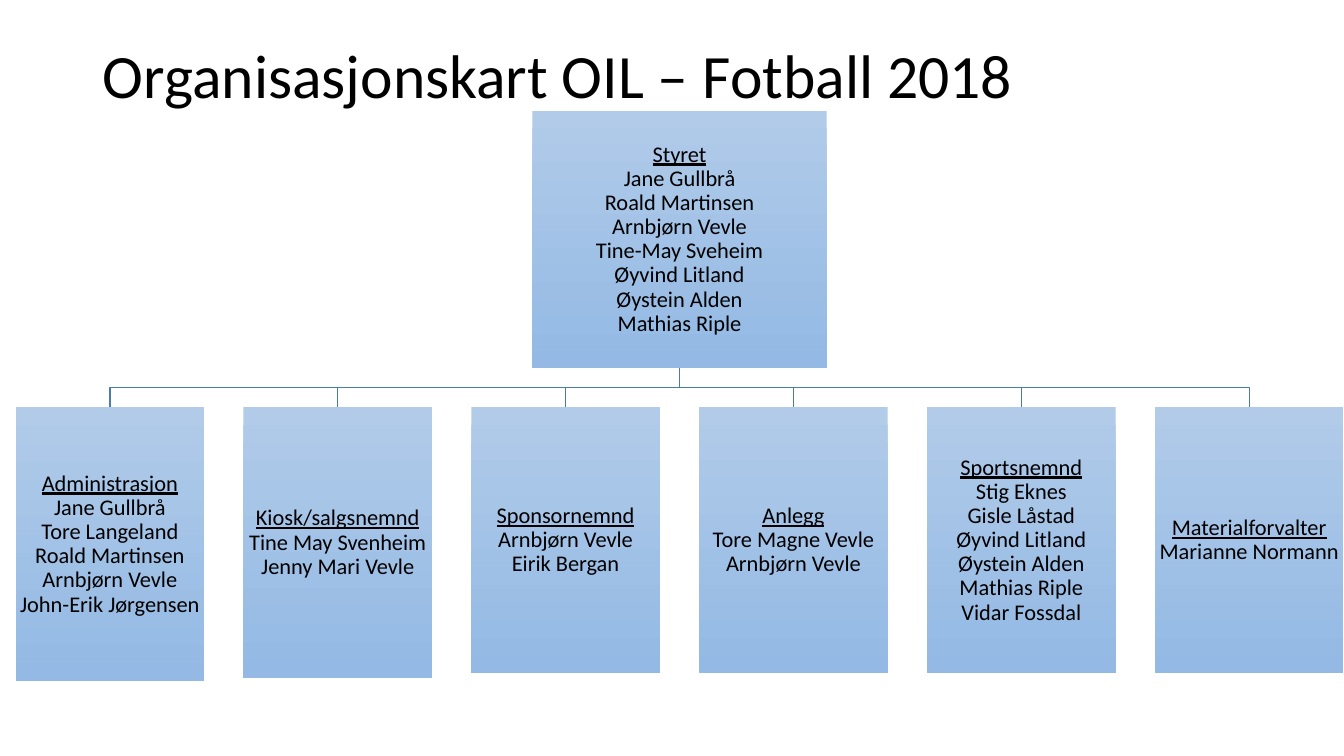
"""Build the organisation chart slide for OIL football, 2018."""
import pptx
import pptx.dml.color
import pptx.enum.text
import pptx.util

Inches = pptx.util.Inches
Pt = pptx.util.Pt
ALIGN = pptx.enum.text.PP_ALIGN
ANCHOR = pptx.enum.text.MSO_ANCHOR

BOARD = ["Styret", "Jane Gullbrå", "Roald Martinsen", "Arnbjørn Vevle",
         "Tine-May Sveheim", "Øyvind Litland", "Øystein Alden", "Mathias Riple"]
GROUPS = [
    (2.72, ["Administrasjon", "Jane Gullbrå", "Tore Langeland",
            "Roald Martinsen", "Arnbjørn Vevle", "John-Erik Jørgensen"]),
    (2.69, ["Kiosk/salgsnemnd", "Tine May Svenheim", "Jenny Mari Vevle"]),
    (2.64, ["Sponsornemnd", "Arnbjørn Vevle", "Eirik Bergan"]),
    (2.64, ["Anlegg", "Tore Magne Vevle", "Arnbjørn Vevle"]),
    (2.64, ["Sportsnemnd", "Stig Eknes", "Gisle Låstad", "Øyvind Litland",
            "Øystein Alden", "Mathias Riple", "Vidar Fossdal"]),
    (2.64, ["Materialforvalter", "Marianne Normann"]),
]
COLUMN_PITCH = 2.26
GROUP_WIDTH = 1.87
GROUP_TOP = 4.04
FIRST_CENTER = 1.09
BOARD_CENTER = FIRST_CENTER + COLUMN_PITCH * (len(GROUPS) - 1) / 2
BOARD_WIDTH, BOARD_TOP, BOARD_HEIGHT = 2.92, 1.1, 2.55
BOARD_BOTTOM = BOARD_TOP + BOARD_HEIGHT
BRANCH_LEVEL = (BOARD_BOTTOM + GROUP_TOP) / 2


def color(value):
    return pptx.dml.color.RGBColor.from_string(value)


def write(frame, lines, *, size, align, anchor, margin, underline_first=False):
    frame.word_wrap = True
    frame.auto_size = pptx.enum.text.MSO_AUTO_SIZE.NONE
    frame.vertical_anchor = anchor
    frame.margin_left = frame.margin_right = Inches(margin)
    frame.margin_top = frame.margin_bottom = Inches(min(margin, 0.05))
    for index, line in enumerate(lines):
        para = frame.add_paragraph() if index else frame.paragraphs[0]
        para.alignment = align
        para.line_spacing = 0.9
        para.space_before = para.space_after = Pt(0)
        span = para.add_run()
        span.text = line
        span.font.name = "Calibri"
        span.font.size = Pt(size)
        span.font.color.rgb = color("000000")
        span.font.underline = underline_first and index == 0


deck = pptx.Presentation()
deck.slide_width = Inches(13.33)
deck.slide_height = Inches(7.5)
page = deck.slides.add_slide(deck.slide_layouts[5])

title = page.shapes.title
title.left, title.top = Inches(0.92), Inches(0.4)
title.width, title.height = Inches(11.5), Inches(1.45)
write(title.text_frame, ["Organisasjonskart OIL – Fotball 2018"], size=44,
      align=ALIGN.LEFT, anchor=ANCHOR.TOP, margin=0.1)

boxes = [(BOARD_CENTER, BOARD_TOP, BOARD_WIDTH, BOARD_HEIGHT, BOARD)]
for column, (height, lines) in enumerate(GROUPS):
    center = FIRST_CENTER + column * COLUMN_PITCH
    boxes.append((center, GROUP_TOP, GROUP_WIDTH, height, lines))

    builder = page.shapes.build_freeform(
        Inches(BOARD_CENTER), Inches(BOARD_BOTTOM))
    corners = [(BOARD_CENTER, BRANCH_LEVEL), (center, BRANCH_LEVEL),
               (center, GROUP_TOP)]
    builder.add_line_segments(
        [(Inches(x), Inches(y)) for x, y in corners], close=False)
    branch = builder.convert_to_shape()
    branch.fill.background()
    branch.line.color.rgb = color("497CAB")
    branch.line.width = Pt(1)
    branch.shadow.inherit = False

for center, top, width, height, lines in boxes:
    box = page.shapes.add_shape(
        pptx.enum.shapes.MSO_SHAPE.RECTANGLE, Inches(center - width / 2),
        Inches(top), Inches(width), Inches(height))
    box.shadow.inherit = False
    box.line.fill.background()
    box.fill.gradient()
    box.fill.gradient_angle = 270
    for stop, shade in zip(box.fill.gradient_stops, ["B1CBE9", "93B9E4"]):
        stop.color.rgb = color(shade)
    write(box.text_frame, lines, size=16, align=ALIGN.CENTER,
          anchor=ANCHOR.MIDDLE, margin=0.01, underline_first=True)

deck.save("out.pptx")
